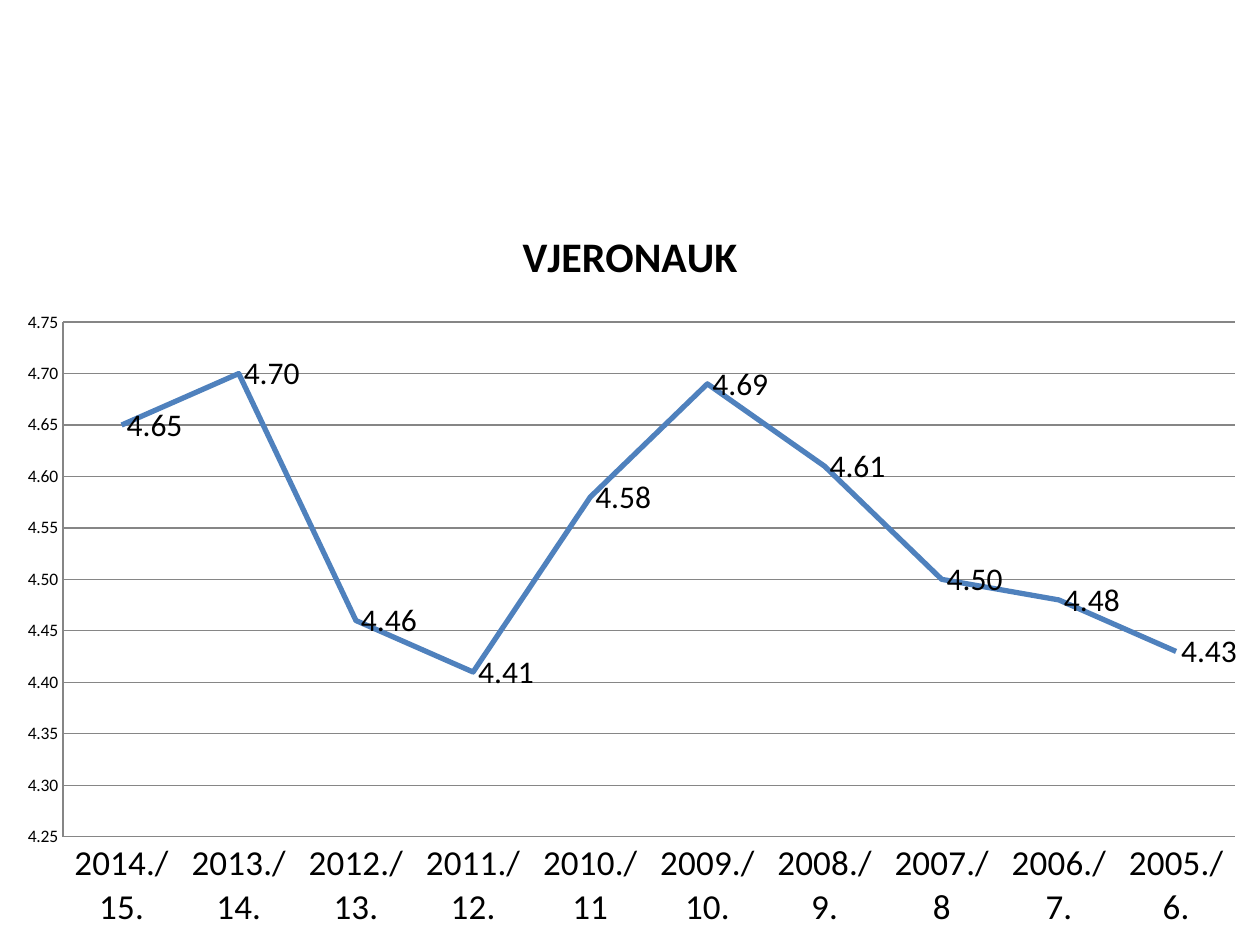
from pptx import Presentation
from pptx.chart.data import CategoryChartData
from pptx.dml.color import RGBColor
from pptx.enum.chart import XL_CHART_TYPE, XL_LABEL_POSITION, XL_MARKER_STYLE, XL_TICK_MARK
from pptx.oxml import parse_xml
from pptx.oxml.ns import nsdecls
from pptx.util import Inches, Pt

LINE = XL_CHART_TYPE.LINE
RIGHT = XL_LABEL_POSITION.RIGHT
NO_MARKER = XL_MARKER_STYLE.NONE
NO_TICK = XL_TICK_MARK.NONE

FONT = "Calibri"
BLACK, BLUE, GREY = "000000", "4F81BD", "868686"
GRADES = {
    "2014./15.": 4.65, "2013./14.": 4.70, "2012./13.": 4.46, "2011./12.": 4.41,
    "2010./11": 4.58, "2009./10.": 4.69, "2008./9.": 4.61, "2007./8": 4.50,
    "2006./7.": 4.48, "2005./6.": 4.43,
}


def rgb(color):
    return RGBColor.from_string(color)


def format_font(font, size, color=BLACK, bold=False):
    font.name, font.size, font.bold = FONT, Pt(size), bold
    font.color.rgb = rgb(color)


def format_line(line, color, width):
    line.color.rgb = rgb(color)
    line.width = Pt(width)


def add_text(tf, text, **fmt):
    r = tf.paragraphs[0].add_run()
    r.text = text
    format_font(r.font, **fmt)


def place_plot_area(chart, **fractions):
    """Fix the inner plot area, in fractions of the chart's size."""
    sizes = "".join(f'<c:{k} val="{v}"/>' for k, v in fractions.items())
    layout = parse_xml(
        f'<c:layout {nsdecls("c")}><c:manualLayout><c:layoutTarget val="inner"/>'
        f'<c:xMode val="edge"/><c:yMode val="edge"/>{sizes}</c:manualLayout></c:layout>')
    plot_area = chart._chartSpace.chart.plotArea
    for old in plot_area.findall(layout.tag):
        plot_area.remove(old)
    plot_area.insert(0, layout)


def format_axis(axis, size):
    axis.major_tick_mark = axis.minor_tick_mark = NO_TICK
    format_font(axis.tick_labels.font, size)
    format_line(axis.format.line, GREY, 0.75)


def format_value_axis(axis):
    format_axis(axis, 10)
    axis.minimum_scale, axis.maximum_scale, axis.major_unit = 4.25, 4.75, 0.05
    axis.tick_labels.number_format = "0.00"
    axis.tick_labels.number_format_is_linked = False
    axis.has_major_gridlines = True
    format_line(axis.major_gridlines.format.line, GREY, 0.75)


def format_series(series):
    series.smooth = False
    series.marker.style = NO_MARKER
    format_line(series.format.line, BLUE, 3)
    labels = series.data_labels
    labels.show_value = True
    labels.position = RIGHT
    labels.number_format = "0.00"
    labels.number_format_is_linked = False
    format_font(labels.font, 18)


def add_grade_chart(s):
    data = CategoryChartData(number_format="0.00")
    data.categories = list(GRADES)
    data.add_series("Series 1", list(GRADES.values()))
    chart = s.shapes.add_chart(LINE, Inches(0), Inches(1.58), Inches(10), Inches(5.92), data).chart
    format_font(chart.font, 10)
    chart.has_legend = False
    chart.has_title = True
    add_text(chart.chart_title.text_frame, "VJERONAUK", size=24, bold=True)
    chart.chart_title.include_in_layout = False
    chart.plots[0].vary_by_categories = False
    format_axis(chart.category_axis, 20)
    format_value_axis(chart.value_axis)
    format_series(chart.plots[0].series[0])
    place_plot_area(chart, x=0.05, y=0.165, w=0.93, h=0.69)


def main():
    prs = Presentation()
    prs.slide_width, prs.slide_height = Inches(10), Inches(7.5)
    s = prs.slides.add_slide(prs.slide_layouts[6])
    add_grade_chart(s)
    prs.save("out.pptx")


if __name__ == "__main__":
    main()
